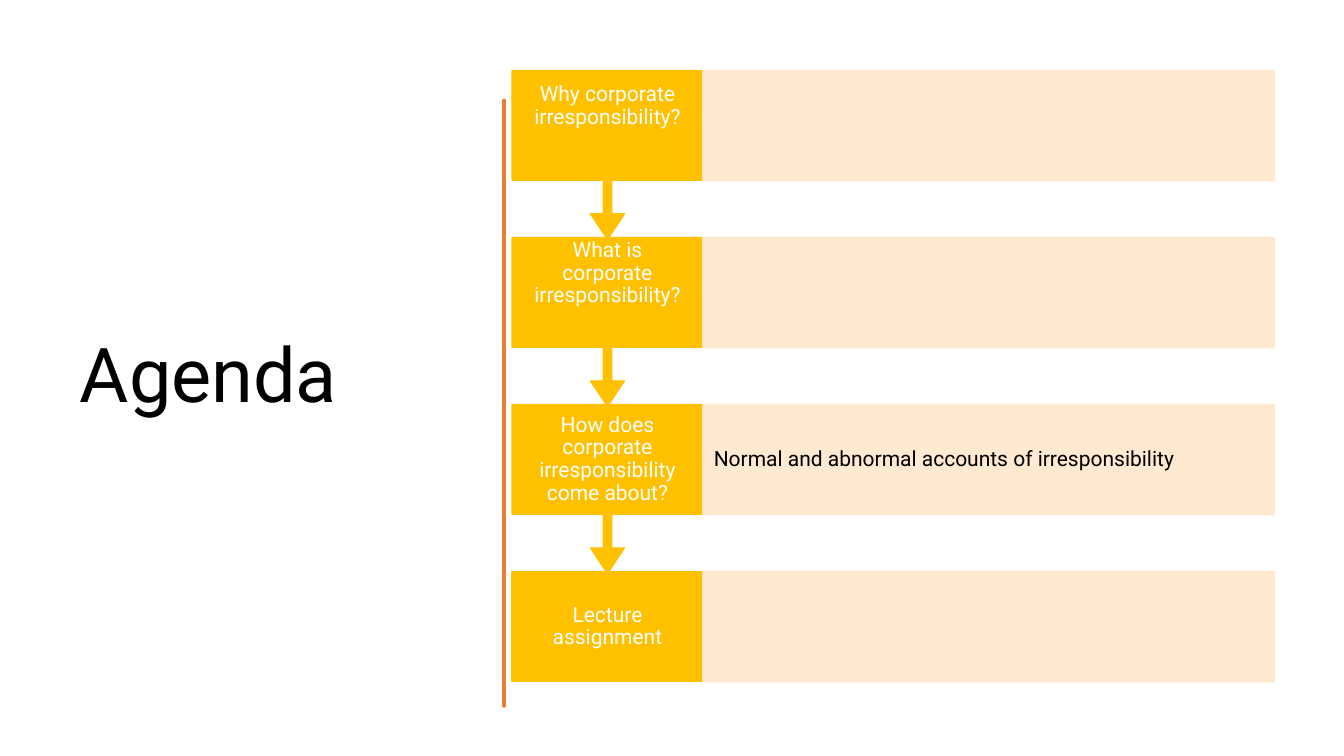
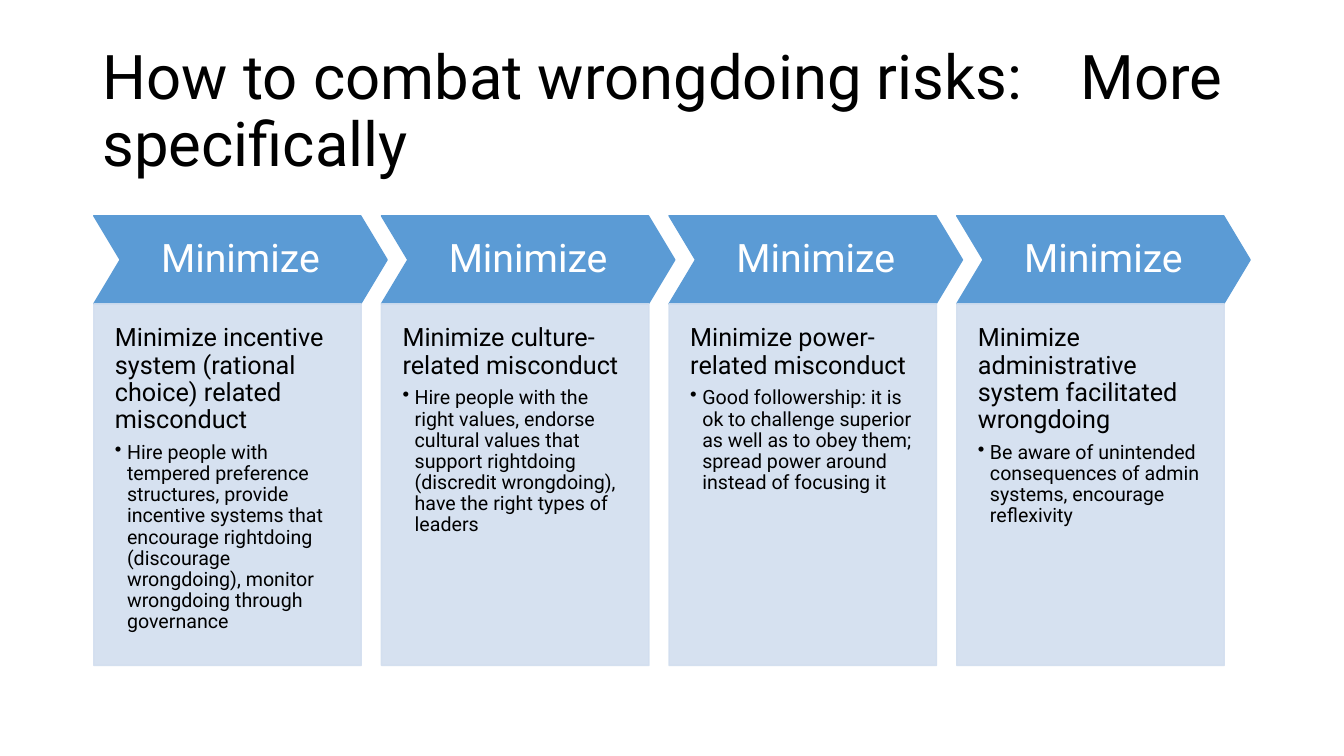
"""Build two slides: an agenda flow and a four-step list of ways to limit wrongdoing."""
from dataclasses import dataclass
from math import sin
from typing import NamedTuple

from lxml.etree import SubElement as Sub
from pptx import Presentation
from pptx.dml.color import RGBColor as Rgb
from pptx.enum.shapes import MSO_SHAPE as Kind
from pptx.enum.text import MSO_ANCHOR as Anchor, PP_ALIGN as Align
from pptx.oxml.ns import qn
from pptx.util import Inches, Pt

WIDE, HIGH = 13.33, 7.5
FONT = "Roboto"
BLACK = Rgb(0x00, 0x00, 0x00)
WHITE = Rgb(0xFF, 0xFF, 0xFF)
GOLD = Rgb(0xFF, 0xC0, 0x00)
CREAM = Rgb(0xFF, 0xE8, 0xCC)
RUST = Rgb(0xED, 0x7D, 0x31)
BLUE = Rgb(0x5B, 0x9B, 0xD5)
PALE = Rgb(0xD2, 0xDE, 0xEF)


class Box(NamedTuple):
    left: float
    top: float
    width: float
    height: float


@dataclass(frozen=True)
class Grid:
    left: float
    top: float
    col: float
    row: float

    def cell(self, col: float, row: float, cols: float, rows: float) -> Box:
        return Box(self.left + col * self.col, self.top + row * self.row,
                   cols * self.col, rows * self.row)


@dataclass(frozen=True)
class Topic:
    text: str
    note: str = ""
    lift: float = 0


@dataclass(frozen=True)
class Step:
    head: str
    point: str


PAGE = Grid(0, 0, WIDE / 100, HIGH / 100)
FLOW = Grid(5.08, 0.7, 1.89, 1.657)
STEPS = Grid(0.93, 2.14, 2.853, 0.875)

TOPICS = (
    Topic("Why corporate irresponsibility?", lift=0.38),
    Topic("What is corporate irresponsibility?", lift=0.38),
    Topic("How does corporate irresponsibility come about?",
          "Normal and abnormal accounts of irresponsibility"),
    Topic("Lecture assignment"),
)

ACTIONS = (
    Step("Minimize incentive system (rational choice) related misconduct",
         "Hire people with tempered preference structures, provide incentive systems "
         "that encourage rightdoing (discourage wrongdoing), monitor wrongdoing "
         "through governance"),
    Step("Minimize culture-related misconduct",
         "Hire people with the right values, endorse cultural values that support "
         "rightdoing (discredit wrongdoing), have the right types of leaders"),
    Step("Minimize power-related misconduct",
         "Good followership: it is ok to challenge superior as well as to obey them; "
         "spread power around instead of focusing it"),
    Step("Minimize administrative system facilitated wrongdoing",
         "Be aware of unintended consequences of admin systems, encourage reflexivity"),
)


def place(box: Box) -> list[int]:
    return [Inches(side) for side in box]


def paint(shape, tint: Rgb, line: float = 1, alpha: int = 100) -> None:
    shape.shadow.inherit = False
    shape.fill.solid()
    shape.fill.fore_color.rgb = tint
    shape.line.color.rgb = tint
    shape.line.width = Pt(line)
    if alpha < 100:
        for node in shape._element.spPr.iter(qn("a:srgbClr")):
            Sub(node, qn("a:alpha"), val=str(alpha * 1000))


def draw(slide, kind: Kind, box: Box, tint: Rgb, alpha: int = 100, adjust: tuple = ()):
    shape = slide.shapes.add_shape(kind, *place(box))
    for index, value in enumerate(adjust):
        shape.adjustments[index] = value
    paint(shape, tint, alpha=alpha)
    return shape


def frame(shape, pads: tuple, anchor: Anchor = Anchor.MIDDLE):
    body = shape.text_frame
    body.word_wrap = True
    body.vertical_anchor = anchor
    (body.margin_left, body.margin_top,
     body.margin_right, body.margin_bottom) = map(Inches, pads)
    return body


def write(para, text: str, size: float, tint: Rgb = BLACK, align: Align = Align.LEFT) -> None:
    para.alignment = align
    para.line_spacing = 0.9
    run = para.add_run()
    run.text = text
    run.font.name = FONT
    run.font.size = Pt(size)
    run.font.color.rgb = tint


def dot(para) -> None:
    props = para._p.get_or_add_pPr()
    props.set("marL", str(Inches(0.12)))
    props.set("indent", str(Inches(-0.12)))
    Sub(props, qn("a:buChar"), char="•")


def title(slide, text: str, size: float, box: Box, tab: float = 0) -> None:
    shape = slide.shapes.add_textbox(*place(box))
    para = frame(shape, (0.1, 0.05, 0.1, 0.05)).paragraphs[0]
    write(para, text, size)
    if tab:
        stops = Sub(para._p.get_or_add_pPr(), qn("a:tabLst"))
        Sub(stops, qn("a:tab"), pos=str(Inches(tab)), algn="l")


def stroke(slide, mid: float, top: float, end: float, count: int = 60) -> None:
    rows = [top + (end - top) * i / count for i in range(count + 1)]
    right = [(mid + 0.01 + 0.01 * sin(5 * y), y) for y in rows]
    left = [(mid - 0.01 + 0.01 * sin(4 * y), y) for y in reversed(rows)]
    first, *rest = right + left
    pen = slide.shapes.build_freeform(*first, scale=float(Inches(1)))
    pen.add_line_segments(rest, close=True)
    paint(pen.convert_to_shape(), RUST, line=3.25)


def agenda(slide) -> None:
    title(slide, "Agenda", 54, PAGE.cell(5.2, 9.3, 28, 81.5))
    stroke(slide, 4.74, 0.84, 6.76)
    last = len(TOPICS) - 1
    for row, topic in reversed(list(enumerate(TOPICS))):
        if row == last:
            label = draw(slide, Kind.RECTANGLE, FLOW.cell(0, row, 1, 0.66), GOLD)
        else:
            label = draw(slide, Kind.DOWN_ARROW_CALLOUT, FLOW.cell(0, row, 1, 1.01), GOLD,
                         adjust=(0.05, 0.1, 0.15, 0.65))
        body = frame(label, (0.13, 0, 0.13, topic.lift))
        write(body.paragraphs[0], topic.text, 15, WHITE, Align.CENTER)
        bar = draw(slide, Kind.RECTANGLE, FLOW.cell(1, row, 3, 0.66), CREAM, alpha=90)
        if topic.note:
            write(frame(bar, (0.11, 0.21, 0.11, 0.21)).paragraphs[0], topic.note, 15)


def combat(slide) -> None:
    title(slide, "How to combat wrongdoing risks:\tMore specifically", 44,
          PAGE.cell(6.9, 5.3, 86.3, 19.3), tab=9.7)
    for col, step in enumerate(ACTIONS):
        arrow = draw(slide, Kind.CHEVRON, STEPS.cell(col, 0, 1.02, 1), BLUE, adjust=(0.3,))
        body = frame(arrow, (0.11,) * 4)
        write(body.paragraphs[0], "Minimize", 28, WHITE, Align.CENTER)
        panel = draw(slide, Kind.RECTANGLE, STEPS.cell(col, 1, 0.93, 4.1), PALE, alpha=90)
        body = frame(panel, (0.21, 0.21, 0.21, 0.42), Anchor.TOP)
        head, point = body.paragraphs[0], body.add_paragraph()
        write(head, step.head, 18)
        head.space_after = Pt(6)
        write(point, step.point, 14)
        dot(point)


def main() -> None:
    deck = Presentation()
    deck.slide_width, deck.slide_height = Inches(WIDE), Inches(HIGH)
    for build in (agenda, combat):
        build(deck.slides.add_slide(deck.slide_layouts[6]))
    deck.save("out.pptx")


if __name__ == "__main__":
    main()
